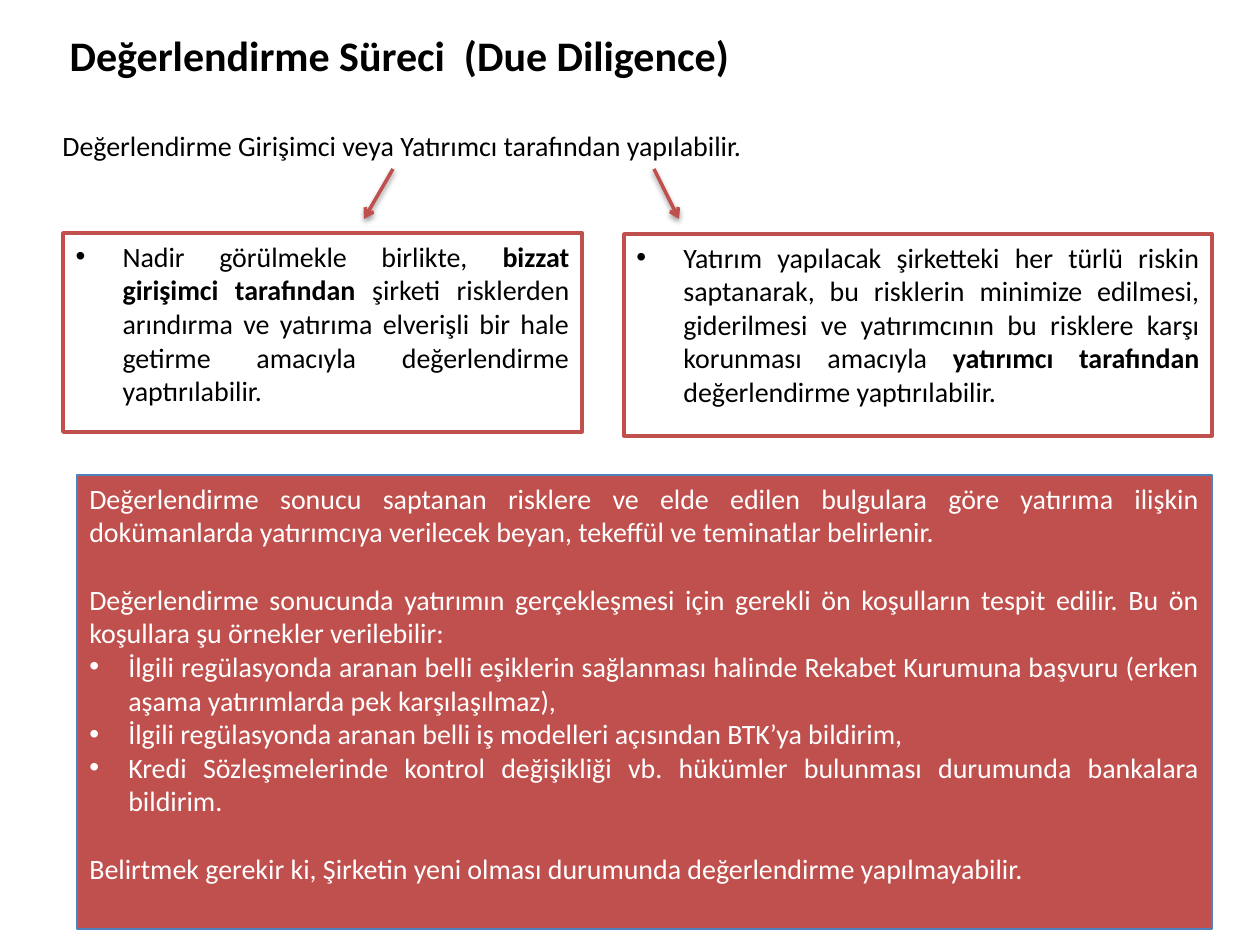
from lxml import etree
from pptx import Presentation
from pptx.dml.color import RGBColor
from pptx.enum.shapes import MSO_CONNECTOR as Link, MSO_SHAPE as Shape
from pptx.enum.text import MSO_ANCHOR as Anchor, MSO_AUTO_SIZE as Fit, PP_ALIGN as Align
from pptx.oxml.ns import qn
from pptx.util import Pt

SCALE = 914400 / 126
BLACK = RGBColor(0x00, 0x00, 0x00)
WHITE = RGBColor(0xFF, 0xFF, 0xFF)
RED = RGBColor(0xC0, 0x50, 0x4D)
BLUE = RGBColor(0x4F, 0x81, 0xBD)
FONT = "Calibri"
GAP = 19.5  # points, one line of text

TITLE = "Değerlendirme Süreci  (Due Diligence)"
INTRO = "Değerlendirme Girişimci veya Yatırımcı tarafından yapılabilir."
# Each case: plain, bold and plain text
FOUNDER = (
    "Nadir görülmekle birlikte, ",
    "bizzat girişimci tarafından ",
    "şirketi risklerden arındırma ve yatırıma elverişli bir hale getirme "
    "amacıyla değerlendirme yaptırılabilir.",
)
BACKER = (
    "Yatırım yapılacak şirketteki her türlü riskin saptanarak, bu risklerin "
    "minimize edilmesi, giderilmesi ve yatırımcının bu risklere karşı "
    "korunması amacıyla ",
    "yatırımcı tarafından ",
    "değerlendirme yaptırılabilir.",
)
# Each result: text, bulleted, space before in points
RESULTS = (
    ("Değerlendirme sonucu saptanan risklere ve elde edilen bulgulara göre "
     "yatırıma ilişkin dokümanlarda yatırımcıya verilecek beyan, tekeffül ve "
     "teminatlar belirlenir.", False, 0),
    ("Değerlendirme sonucunda yatırımın gerçekleşmesi için gerekli ön "
     "koşulların tespit edilir. Bu ön koşullara şu örnekler verilebilir:", False, GAP),
    ("İlgili regülasyonda aranan belli eşiklerin sağlanması halinde Rekabet "
     "Kurumuna başvuru (erken aşama yatırımlarda pek karşılaşılmaz),", True, 0),
    ("İlgili regülasyonda aranan belli iş modelleri açısından BTK’ya bildirim,", True, 0),
    ("Kredi Sözleşmelerinde kontrol değişikliği vb. hükümler bulunması "
     "durumunda bankalara bildirim.", True, 0),
    ("Belirtmek gerekir ki, Şirketin yeni olması durumunda değerlendirme "
     "yapılmayabilir.", False, GAP),
)


def px(num):
    return round(num * SCALE)


def place(shape, left, top, width, height):
    shape.left, shape.top = px(left), px(top)
    shape.width, shape.height = px(width), px(height)


def frame(shape):
    """Return the shape's text frame, wrapped, fixed in size and set from the top."""
    text = shape.text_frame
    text.word_wrap = True
    text.auto_size = Fit.NONE
    text.vertical_anchor = Anchor.TOP
    return text


def style(para, color=BLACK, size=16, align=Align.JUSTIFY, before=0):
    para.alignment = align
    para.space_before = Pt(before)
    for run in para.runs:
        run.font.name = FONT
        run.font.size = Pt(size)
        run.font.color.rgb = color


def bullet(para, indent):
    props = para._p.get_or_add_pPr()
    props.set("marL", str(px(indent)))
    props.set("indent", str(-px(indent)))
    etree.SubElement(props, qn("a:buFont"), typeface="Arial")
    etree.SubElement(props, qn("a:buChar"), char="•")


def paint(shape, fill, line, width):
    shape.fill.solid()
    shape.fill.fore_color.rgb = fill
    shape.line.color.rgb = line
    shape.line.width = Pt(width)


def add_box(slide, *area):
    box = slide.shapes.add_shape(Shape.RECTANGLE, *map(px, area))
    box.shadow.inherit = False
    return box


def fill_case(box, parts):
    """Draw a red-edged box with one bullet whose middle part is bold."""
    paint(box, WHITE, RED, 2)
    para = frame(box).paragraphs[0]
    bullet(para, 47)
    for num, part in enumerate(parts):
        run = para.add_run()
        run.text = part
        run.font.bold = num == 1
    style(para)


def fill_results(box):
    paint(box, RED, BLUE, 0.75)
    text = frame(box)
    text.text = "\n".join(row[0] for row in RESULTS)
    for para, (_, listed, before) in zip(text.paragraphs, RESULTS):
        if listed:
            bullet(para, 39)
        style(para, WHITE, before=before)


def add_arrow(slide, *ends):
    """Add a red arrow with a soft shadow below it."""
    arrow = slide.shapes.add_connector(Link.STRAIGHT, *map(px, ends))
    arrow.line.color.rgb = RED
    arrow.line.width = Pt(2)
    etree.SubElement(arrow.line._get_or_add_ln(), qn("a:tailEnd"), type="arrow")
    effects = etree.SubElement(arrow._element.spPr, qn("a:effectLst"))
    shadow = etree.SubElement(
        effects, qn("a:outerShdw"), blurRad=str(Pt(3.1)), dist=str(Pt(1.6)),
        dir="5400000", rotWithShape="0")
    color = etree.SubElement(shadow, qn("a:srgbClr"), val=str(BLACK))
    etree.SubElement(color, qn("a:alpha"), val="38000")


def main():
    deck = Presentation()
    deck.slide_width, deck.slide_height = px(1260), px(945)
    slide = deck.slides.add_slide(deck.slide_layouts[1])

    title = slide.shapes.title
    place(title, 57, 23, 1134, 84)
    text = frame(title)
    text.text = TITLE
    style(text.paragraphs[0], size=24, align=Align.LEFT)
    text.paragraphs[0].runs[0].font.bold = True

    body = slide.placeholders[1]
    place(body, 63, 233, 519, 199)
    fill_case(body, FOUNDER)
    fill_case(add_box(slide, 624, 234, 588, 202), BACKER)

    intro = frame(slide.shapes.add_textbox(*map(px, (50, 122, 1147, 47))))
    intro.text = INTRO
    style(intro.paragraphs[0], align=Align.LEFT)

    fill_results(add_box(slide, 77, 475, 1135, 454))
    add_arrow(slide, 393, 169, 364, 219)
    add_arrow(slide, 654, 169, 679, 219)
    deck.save("out.pptx")


if __name__ == "__main__":
    main()
